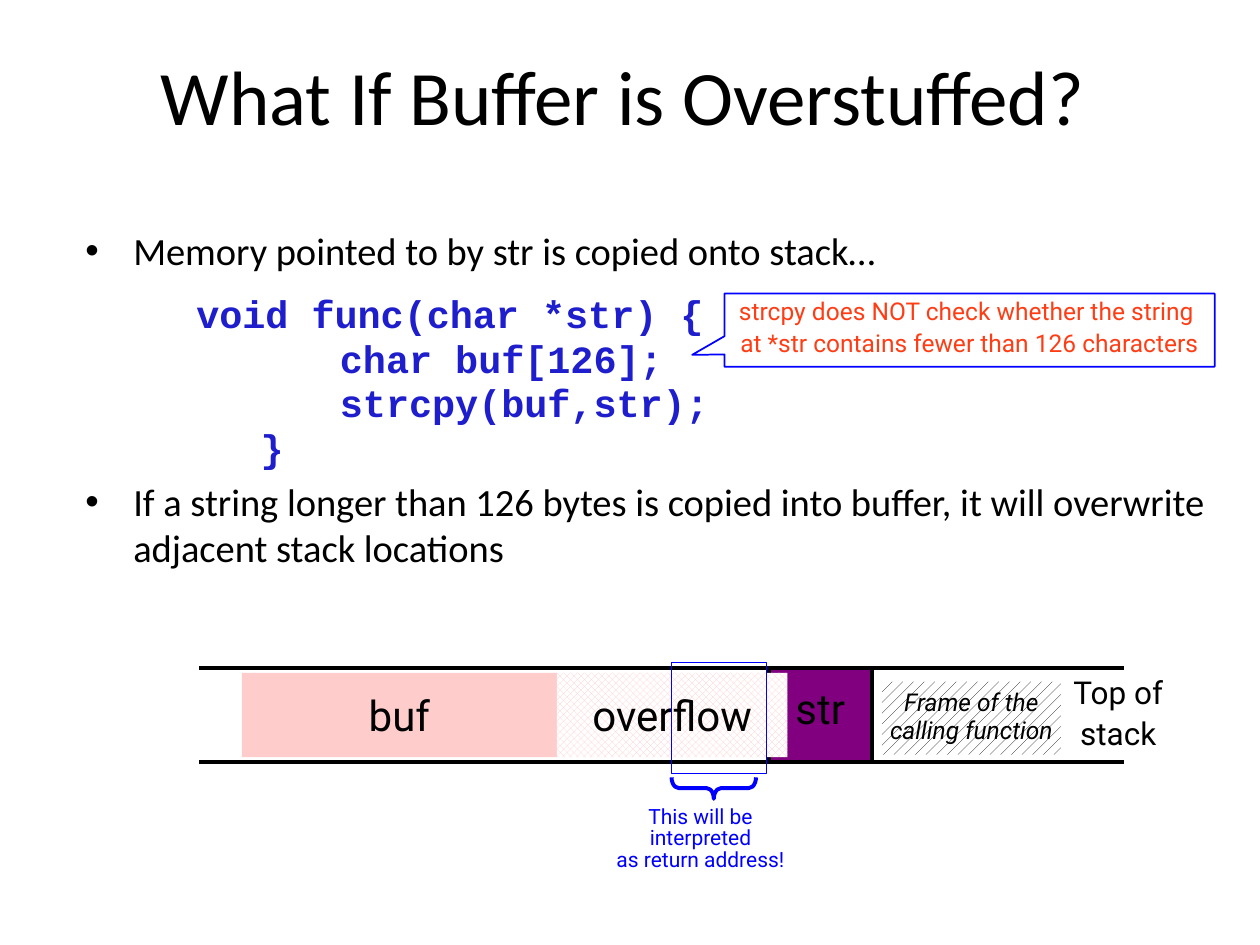
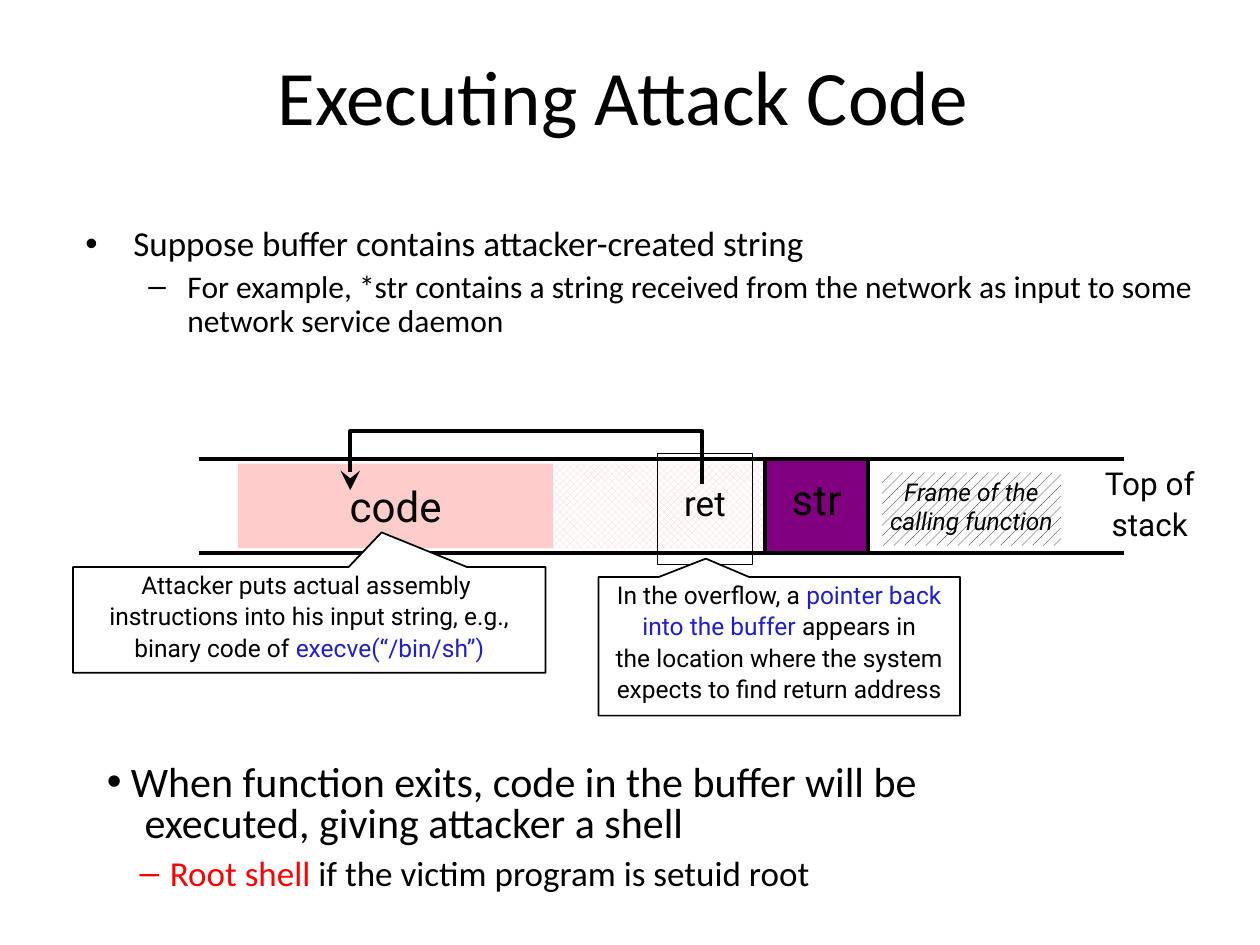
"""Build two slides on how a buffer overflow hijacks the return address."""
from lxml import etree
from pptx import Presentation
from pptx.dml.color import RGBColor
from pptx.enum.dml import MSO_PATTERN
from pptx.enum.shapes import MSO_CONNECTOR, MSO_SHAPE
from pptx.enum.text import MSO_ANCHOR, PP_ALIGN
from pptx.oxml.ns import qn
from pptx.util import Inches, Pt

RECT, CALLOUT, BRACE = MSO_SHAPE.RECTANGLE, MSO_SHAPE.RECTANGULAR_CALLOUT, MSO_SHAPE.RIGHT_BRACE
STRAIGHT = MSO_CONNECTOR.STRAIGHT
CHECKS, DOTS = MSO_PATTERN.LARGE_CHECKER_BOARD, MSO_PATTERN.PERCENT_20
LEFT, CENTER = PP_ALIGN.LEFT, PP_ALIGN.CENTER
TOP, MIDDLE = MSO_ANCHOR.TOP, MSO_ANCHOR.MIDDLE

BLACK = RGBColor(0x00, 0x00, 0x00)
WHITE = RGBColor(0xFF, 0xFF, 0xFF)
BLUE = RGBColor(0x00, 0x00, 0xFF)
CODE_BLUE = RGBColor(0x1F, 0x1E, 0xCC)
PINK = RGBColor(0xFF, 0xCC, 0xCC)
PURPLE = RGBColor(0x80, 0x00, 0x80)
ORANGE = RGBColor(0xFF, 0x3D, 0x15)
RED = RGBColor(0xFF, 0x00, 0x00)

BODY_FONT, CODE_FONT, LABEL_FONT = "Calibri", "Courier New", "Roboto"
BULLET = dict(left=0.38, hang=-0.38, bullet="•")
CODE = dict(font=CODE_FONT, color=CODE_BLUE, bold=True, spacing=0.8)

OVERSTUFFED = [
    dict(BULLET, runs=["Memory pointed to by str is copied onto stack…"]),
    dict(CODE, runs=["void func(char *str) {"], left=0.88, spacing=1.2),
    dict(CODE, runs=["char buf[126];"], left=2.02),
    dict(CODE, runs=["strcpy(buf,str);"], left=2.02),
    dict(CODE, runs=["}"], left=1.39),
    dict(BULLET, runs=["If a string longer than 126 bytes is copied into buffer, "
                       "it will overwrite adjacent stack locations"]),
]
ATTACK = [
    dict(BULLET, runs=["Suppose buffer contains attacker-created string"], spacing=0.9),
    dict(runs=["For example, *str contains a string received from the network "
               "as input to some network service daemon"],
         size=18, left=0.81, hang=-0.31, bullet="–", spacing=0.9),
]
OUTCOME = [
    dict(runs=["When function exits, code in the buffer will be"],
         left=0.19, hang=-0.19, bullet="•", spacing=1.7),
    dict(runs=["executed, giving attacker a shell"], left=0.3, spacing=0.6),
    dict(runs=[("Root shell", RED), " if the victim program is setuid root"],
         size=20, left=0.5, hang=-0.24, bullet="–", bullet_color=RED),
]
STRCPY_NOTE = ["strcpy does NOT check whether the string ",
               "at *str contains fewer than 126 characters"]
RETURN_NOTE = ["This will be", "interpreted", "as return address!"]
CODE_NOTE = [
    "Attacker puts actual assembly ",
    "instructions into his input string, e.g.,",
    ["binary code of ", ("execve(“/bin/sh”)", CODE_BLUE)],
]
POINTER_NOTE = [
    ["In the overflow, a ", ("pointer back", CODE_BLUE)],
    [("into the buffer", CODE_BLUE), " appears in"],
    "the location where the system",
    "expects to find return address",
]
CALLER = ["Frame of the", "calling function"]
STACK_TOP = ["Top of", "stack"]
ARROW = [(5.57, 3.84), (5.57, 3.42), (2.78, 3.42), (2.78, 3.89)]

STACK_LEFT, STACK_RIGHT, STACK_HEIGHT = 1.58, 8.92, 0.75
CELL_HEIGHT = 0.67


def box(at):
    return [Inches(v) for v in at]


def add_bullet(p, char, color):
    pPr = p._p.get_or_add_pPr()
    if color is not None:
        clr = etree.SubElement(pPr, qn("a:buClr"))
        etree.SubElement(clr, qn("a:srgbClr")).set("val", str(color))
    etree.SubElement(pPr, qn("a:buFont")).set("typeface", "Arial")
    etree.SubElement(pPr, qn("a:buChar")).set("char", char)


def write(tf, paras, align=LEFT, anchor=TOP, wrap=True, **style):
    tf.word_wrap = wrap
    tf.vertical_anchor = anchor
    for i, para in enumerate(paras):
        look = dict(font=LABEL_FONT, color=BLACK, spacing=1.0, bold=False, italic=False)
        look.update(style)
        look.update(para)
        p = tf.paragraphs[0] if i == 0 else tf.add_paragraph()
        p.alignment = align
        p.line_spacing = look["spacing"]
        p.space_before = Pt(look["size"] * 0.2)
        pPr = p._p.get_or_add_pPr()
        pPr.set("marL", str(Inches(look.get("left", 0))))
        pPr.set("indent", str(Inches(look.get("hang", 0))))
        if "bullet" in look:
            add_bullet(p, look["bullet"], look.get("bullet_color"))
        for run in look["runs"]:
            text, color = run if isinstance(run, tuple) else (run, look["color"])
            r = p.add_run()
            r.text = text
            r.font.name, r.font.size = look["font"], Pt(look["size"])
            r.font.bold, r.font.italic = look["bold"], look["italic"]
            r.font.color.rgb = color


def label(sp, lines, **style):
    paras = [dict(runs=line if isinstance(line, list) else [line]) for line in lines]
    write(sp.text_frame, paras, CENTER, **style)


def add_text(s, at, paras, size):
    sp = s.shapes.add_textbox(*box(at))
    write(sp.text_frame, paras, size=size, font=BODY_FONT)


def add_label(s, at, lines, **style):
    label(s.shapes.add_textbox(*box(at)), lines, wrap=False, **style)


def paint(sp, fill=None, pattern=None, line=None, width=1):
    sp.shadow.inherit = False
    if pattern is not None:
        sp.fill.patterned()
        sp.fill.pattern = pattern
        sp.fill.fore_color.rgb, sp.fill.back_color.rgb = fill, WHITE
    elif fill is not None:
        sp.fill.solid()
        sp.fill.fore_color.rgb = fill
    else:
        sp.fill.background()
    if line is None:
        sp.line.fill.background()
    else:
        sp.line.color.rgb = line
        sp.line.width = Pt(width)


def add_shape(s, kind, at, adjust=(), **look):
    sp = s.shapes.add_shape(kind, *box(at))
    for i, value in enumerate(adjust):
        sp.adjustments[i] = value
    paint(sp, **look)
    return sp


def add_overflow(s, left, top):
    return add_shape(s, RECT, (left + 2.5, top + 0.04, 1.83, CELL_HEIGHT),
                     fill=PINK, pattern=CHECKS)


def add_stack(s, left, top, buffer_name, top_label_left):
    for y in (top, top + STACK_HEIGHT):
        c = s.shapes.add_connector(STRAIGHT, *box((STACK_LEFT, y, STACK_RIGHT, y)))
        c.line.color.rgb, c.line.width = BLACK, Pt(2.25)
        etree.SubElement(c._element.spPr, qn("a:effectLst"))
    cell = dict(anchor=MIDDLE, wrap=False)
    sp = add_shape(s, RECT, (left, top + 0.04, 2.5, CELL_HEIGHT), fill=PINK)
    label(sp, [buffer_name], size=24, **cell)
    sp = add_shape(s, RECT, (left + 4.18, top, 0.82, STACK_HEIGHT),
                   fill=PURPLE, line=BLACK, width=2.25)
    label(sp, ["str"], size=24, spacing=0.6, **cell)
    sp = add_shape(s, RECT, (7, top + 0.11, 1.42, 0.58), fill=BLACK, pattern=DOTS)
    label(sp, CALLER, size=14, spacing=0.8, italic=True, **cell)
    add_label(s, (top_label_left, top + 0.03, 0.91, 0.7), STACK_TOP, size=18, spacing=0.9)


def add_return_cell(s, left, top, color):
    return add_shape(s, RECT, (left, top - 0.04, 0.75, 0.88), line=color, width=0.5)


def add_slide(prs, title):
    s = prs.slides.add_slide(prs.slide_layouts[5])
    sp = s.shapes.title
    sp.left, sp.top, sp.width, sp.height = box((0.44, 0.25, 9.01, 1))
    tf = sp.text_frame
    tf.vertical_anchor = MIDDLE
    p = tf.paragraphs[0]
    p.alignment = CENTER
    r = p.add_run()
    r.text = title
    r.font.name, r.font.size = BODY_FONT, Pt(44)
    r.font.color.rgb = BLACK
    return s


def add_arrow(s):
    points = [box(point) for point in ARROW]
    fb = s.shapes.build_freeform(*points[0], scale=1.0)
    fb.add_line_segments(points[1:], close=False)
    sp = fb.convert_to_shape()
    paint(sp, line=BLACK, width=2.25)
    tail = etree.SubElement(sp.line._get_or_add_ln(), qn("a:tailEnd"))
    for key, value in (("type", "stealth"), ("w", "lg"), ("len", "lg")):
        tail.set(key, value)


def build_overstuffed(prs):
    s = add_slide(prs, "What If Buffer is Overstuffed?")
    left, top = 1.92, 5.3
    add_text(s, (0.58, 1.75, 9.17, 5.08), OVERSTUFFED, 22)
    sp = add_shape(s, CALLOUT, (5.75, 2.33, 3.89, 0.58), (-0.566, 0.339), line=BLUE)
    label(sp, STRCPY_NOTE, size=14, spacing=0.9, color=ORANGE, wrap=False)
    add_stack(s, left, top, "buf", 8.42)
    sp = add_shape(s, BRACE, (5.58, 5.92, 0.17, 0.67), (0.333, 0.5), line=BLUE, width=2.25)
    sp.rotation = 90
    add_label(s, (4.79, 6.38, 1.54, 0.6), RETURN_NOTE, size=12, spacing=0.7, color=BLUE)
    label(add_overflow(s, left, top), ["overflow"], size=24, anchor=MIDDLE, wrap=False)
    add_return_cell(s, 5.33, top, BLUE)


def build_attack(prs):
    s = add_slide(prs, "Executing Attack Code")
    left, top = 1.89, 3.64
    add_text(s, (0.58, 1.75, 9.17, 1.42), ATTACK, 20)
    add_overflow(s, left, top)
    add_stack(s, left, top, "code", 8.67)
    sp = add_return_cell(s, 5.22, top, BLACK)
    label(sp, ["ret"], size=20, spacing=0.6, anchor=MIDDLE, wrap=False)
    for at, adjust, lines in (
        ((0.58, 4.5, 3.75, 0.84), (0.153, -0.827), CODE_NOTE),
        ((4.75, 4.58, 2.87, 1.1), (-0.203, -0.633), POINTER_NOTE),
    ):
        sp = add_shape(s, CALLOUT, at, adjust, fill=WHITE, line=BLACK)
        label(sp, lines, size=14, spacing=0.9, wrap=False)
    add_arrow(s)
    add_text(s, (0.75, 5.67, 8.33, 1.5), OUTCOME, 24)


def main():
    prs = Presentation()
    prs.slide_width, prs.slide_height = Inches(10), Inches(7.5)
    build_overstuffed(prs)
    build_attack(prs)
    prs.save("out.pptx")


if __name__ == "__main__":
    main()
